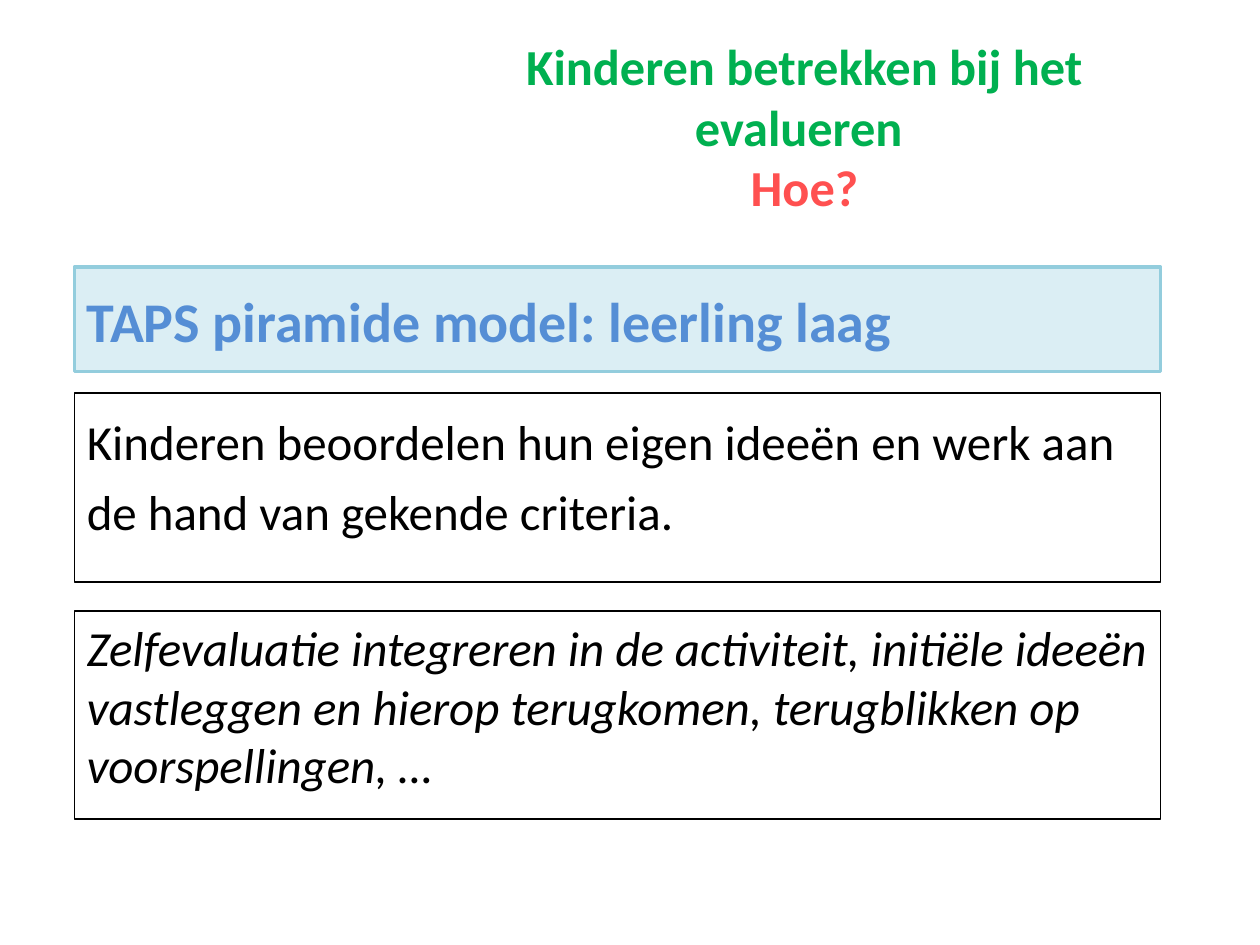
from dataclasses import dataclass

import pptx
import pptx.dml.color
import pptx.enum.shapes
import pptx.enum.text
import pptx.util

Inches = pptx.util.Inches
Pt = pptx.util.Pt
ALIGN = pptx.enum.text.PP_ALIGN
ANCHOR = pptx.enum.text.MSO_ANCHOR


@dataclass(frozen=True)
class Theme:
    font: str = "Calibri"
    title_size: float = 28.8
    heading_size: float = 32
    body_size: float = 28
    green: str = "00B050"
    red: str = "FF5050"
    blue: str = "558ED5"
    pale_blue: str = "DBEEF4"
    border_blue: str = "93CDDD"
    black: str = "000000"


theme = Theme()


def rgb(value):
    return pptx.dml.color.RGBColor.from_string(value)


def write(para, text, *, size, color=theme.black, bold=False, italic=False):
    span = para.add_run()
    span.text = text
    span.font.name = theme.font
    span.font.size = Pt(size)
    span.font.color.rgb = rgb(color)
    span.font.bold = bold
    span.font.italic = italic


deck = pptx.Presentation()
deck.slide_width = Inches(10)
deck.slide_height = Inches(7.5)
page = deck.slides.add_slide(deck.slide_layouts[6])

# Title
title = page.shapes.add_textbox(Inches(3.27), Inches(0.3), Inches(6.23), Inches(1.4))
title.text_frame.word_wrap = True
title.text_frame.vertical_anchor = ANCHOR.MIDDLE
para = title.text_frame.paragraphs[0]
para.alignment = ALIGN.CENTER
write(para, "Kinderen betrekken bij het evalueren ", size=theme.title_size,
      color=theme.green, bold=True)
para.add_line_break()
write(para, "Hoe?", size=theme.title_size, color=theme.red, bold=True)

# Stacked panels: top, height, fill, border, border width, line spacing, text, format
panels = [
    (2.12, 0.83, theme.pale_blue, theme.border_blue, 2, 1.2,
     "TAPS piramide model: leerling laag",
     dict(size=theme.heading_size, color=theme.blue, bold=True)),
    (3.12, 1.5, None, theme.black, 0.75, 1.2,
     "Kinderen beoordelen hun eigen ideeën en werk aan de hand van gekende criteria.",
     dict(size=theme.body_size)),
    (4.85, 1.65, None, theme.black, 0.75, 1.0,
     "Zelfevaluatie integreren in de activiteit, initiële ideeën vastleggen "
     "en hierop terugkomen, terugblikken op voorspellingen, …",
     dict(size=theme.body_size, italic=True)),
]
for top, height, fill, border, width, spacing, text, text_format in panels:
    box = page.shapes.add_shape(pptx.enum.shapes.MSO_SHAPE.RECTANGLE,
                                Inches(0.59), Inches(top), Inches(8.62), Inches(height))
    box.shadow.inherit = False
    if fill:
        box.fill.solid()
        box.fill.fore_color.rgb = rgb(fill)
    else:
        box.fill.background()
    box.line.color.rgb = rgb(border)
    box.line.width = Pt(width)
    box.text_frame.word_wrap = True
    box.text_frame.vertical_anchor = ANCHOR.TOP
    para = box.text_frame.paragraphs[0]
    para.alignment = ALIGN.LEFT
    para.line_spacing = spacing
    write(para, text, **text_format)

deck.save("out.pptx")
